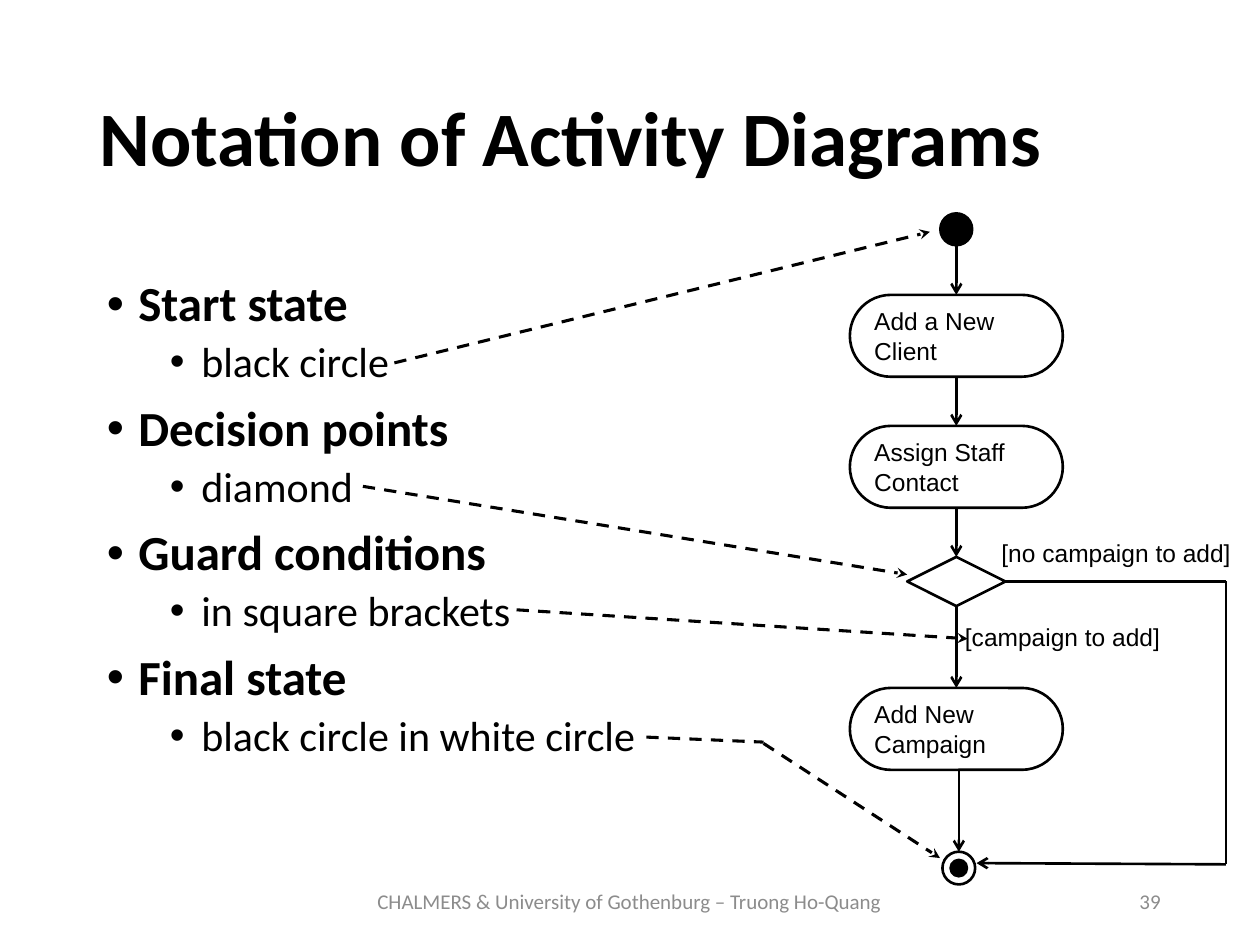
from pptx import Presentation
from pptx import util as u
from pptx.dml.color import RGBColor
from pptx.enum import dml, shapes, text
from pptx.oxml.ns import qn
from lxml import etree

BLACK = RGBColor(0x00, 0x00, 0x00)
WHITE = RGBColor(0xFF, 0xFF, 0xFF)
GREY = RGBColor(0x8C, 0x8C, 0x8C)

# Content
TITLE = "Notation of Activity Diagrams"
FOOTER = "CHALMERS & University of Gothenburg – Truong Ho-Quang"
PAGE = "39"
NOTATION = [
    ("Start state", "black circle"),
    ("Decision points", "diamond"),
    ("Guard conditions", "in square brackets"),
    ("Final state", "black circle in white circle"),
]
ACTIVITIES = {0: "Add a New\nClient", 1: "Assign Staff\nContact", 3: "Add New\nCampaign"}
DECISION_ROW = 2
GUARDS = [("[campaign to add]", 7.56, 4.89, 2.08), ("[no campaign to add]", 7.85, 4.22, 2.36)]
POINTERS = [  # from, to, arrowhead
    ((3.13, 2.88), (7.38, 1.84), "stealth"),
    ((2.88, 3.86), (7.2, 4.56), "stealth"),
    ((4.1, 4.84), (7.68, 5.07), "stealth"),
    ((5.13, 5.85), (6.06, 5.89), None),
    ((6.06, 5.9), (7.46, 6.81), "stealth"),
]

# Diagram grid, in inches
AXIS, FINAL_X, BYPASS_X = 7.59, 7.61, 9.73
ROW_TOP, ROW_STEP = 2.34, 1.04
BOX_W, BOX_H = 1.69, 0.65
DIAMOND_W, DIAMOND_H = 0.78, 0.39
CIRCLE, DOT = 0.26, 0.13
START_Y, FINAL_Y = 1.82, 6.89
TOP, BOTTOM = 0, 2

prs = Presentation()
prs.slide_width, prs.slide_height = u.Inches(10), u.Inches(7.5)
slide = prs.slides.add_slide(prs.slide_layouts[6])


def write(frame, content, size=14, font="Arial", color=BLACK, bold=False,
          align=text.PP_ALIGN.LEFT, anchor=text.MSO_ANCHOR.TOP, spacing=None):
    frame.word_wrap = True
    frame.vertical_anchor = anchor
    for i, line in enumerate(content.split("\n")):
        para = frame.paragraphs[0] if i == 0 else frame.add_paragraph()
        para.alignment, para.line_spacing = align, spacing
        run = para.add_run()
        run.text = line
        run.font.size, run.font.name = u.Pt(size), font
        run.font.bold, run.font.color.rgb = bold, color


def text_box(left, top, width, height):
    return slide.shapes.add_textbox(*map(u.Inches, (left, top, width, height))).text_frame


def node(kind, x, y, width, height, fill=WHITE, line=1.5):
    """Add a shape centred on x, y."""
    shape = slide.shapes.add_shape(
        kind, *map(u.Inches, (x - width / 2, y - height / 2, width, height)))
    shape.shadow.inherit = False
    shape.fill.solid()
    shape.fill.fore_color.rgb = fill
    shape.line.color.rgb, shape.line.width = BLACK, u.Pt(line)
    return shape


def link(start, end, head=None, width=1.5, dashed=False, source=None, target=None):
    line = slide.shapes.add_connector(
        shapes.MSO_CONNECTOR.STRAIGHT, *map(u.Inches, (*start, *end)))
    line.line.color.rgb, line.line.width = BLACK, u.Pt(width)
    if dashed:
        line.line.dash_style = dml.MSO_LINE.DASH
    if head:
        etree.SubElement(line.line._get_or_add_ln(), qn("a:tailEnd"), type=head)
    etree.SubElement(line._element.spPr, qn("a:effectLst"))
    if source is not None:
        line.begin_connect(source, BOTTOM)
    if target is not None:
        line.end_connect(target, TOP)


# Title and footer
write(text_box(0.69, 0.4, 8.62, 1.45), TITLE, size=44, font="Calibri", bold=True,
      anchor=text.MSO_ANCHOR.MIDDLE, spacing=0.9)
for content, left, width, align in [(FOOTER, 2.72, 4.55, text.PP_ALIGN.CENTER),
                                    (PAGE, 7.06, 2.25, text.PP_ALIGN.RIGHT)]:
    write(text_box(left, 6.95, width, 0.4), content, size=12, font="Calibri", color=GREY,
          align=align, anchor=text.MSO_ANCHOR.MIDDLE)

# Notation list
notation = text_box(0.75, 2.17, 8.5, 4.5)
notation.word_wrap = True
entries = [(level, entry) for pair in NOTATION for level, entry in enumerate(pair)]
for i, (level, entry) in enumerate(entries):
    para = notation.paragraphs[0] if i == 0 else notation.add_paragraph()
    props = para._p.get_or_add_pPr()
    props.set("marL", str(u.Inches(0.25 + 0.5 * level)))
    props.set("indent", str(u.Inches(-0.25)))
    etree.SubElement(props, qn("a:buFont"), typeface="Arial")
    etree.SubElement(props, qn("a:buChar"), char="•")
    para.level, para.line_spacing = level, 0.9
    para.space_before = u.Pt((10, 5)[level] if i else 0)
    para.text = entry
    para.font.size, para.font.name = u.Pt((28, 24)[level]), "Calibri"
    para.font.bold, para.font.color.rgb = level == 0, BLACK

# Guard conditions
for guard, left, top, width in GUARDS:
    write(text_box(left, top, width, 0.33), guard)

# Activities and decision point, one per row
steps = []
for row in range(4):
    top = ROW_TOP + row * ROW_STEP
    if row == DECISION_ROW:
        steps.append(node(shapes.MSO_SHAPE.DIAMOND, AXIS, top + DIAMOND_H / 2,
                          DIAMOND_W, DIAMOND_H))
        continue
    activity = node(shapes.MSO_SHAPE.ROUNDED_RECTANGLE, AXIS, top + BOX_H / 2, BOX_W, BOX_H)
    activity.adjustments[0] = 0.5
    write(activity.text_frame, ACTIVITIES[row], anchor=text.MSO_ANCHOR.MIDDLE)
    steps.append(activity)

# Start and final states
OVAL = shapes.MSO_SHAPE.OVAL
node(OVAL, AXIS, START_Y, CIRCLE, CIRCLE, fill=BLACK, line=1)
final = node(OVAL, FINAL_X, FINAL_Y, CIRCLE, CIRCLE)
node(OVAL, FINAL_X, FINAL_Y, DOT, DOT, fill=BLACK)

# Main flow
link((AXIS, START_Y + CIRCLE / 2), (AXIS, ROW_TOP), "arrow", target=steps[0])
for upper, lower in zip(steps, steps[1:]):
    link((AXIS, ROW_TOP), (AXIS, ROW_TOP), "arrow", source=upper, target=lower)
link((FINAL_X, ROW_TOP + 3 * ROW_STEP + BOX_H), (FINAL_X, FINAL_Y - CIRCLE / 2), "arrow",
     target=final)

# Bypass when there is no campaign to add
decision_y = ROW_TOP + DECISION_ROW * ROW_STEP + DIAMOND_H / 2
link((AXIS + DIAMOND_W / 2, decision_y), (BYPASS_X, decision_y))
link((BYPASS_X, decision_y), (BYPASS_X, 6.86))
link((BYPASS_X, 6.86), (7.75, 6.85), "arrow")

# Pointers from the list to the diagram
for start, end, head in POINTERS:
    link(start, end, head, width=1.75, dashed=True)

prs.save("out.pptx")
